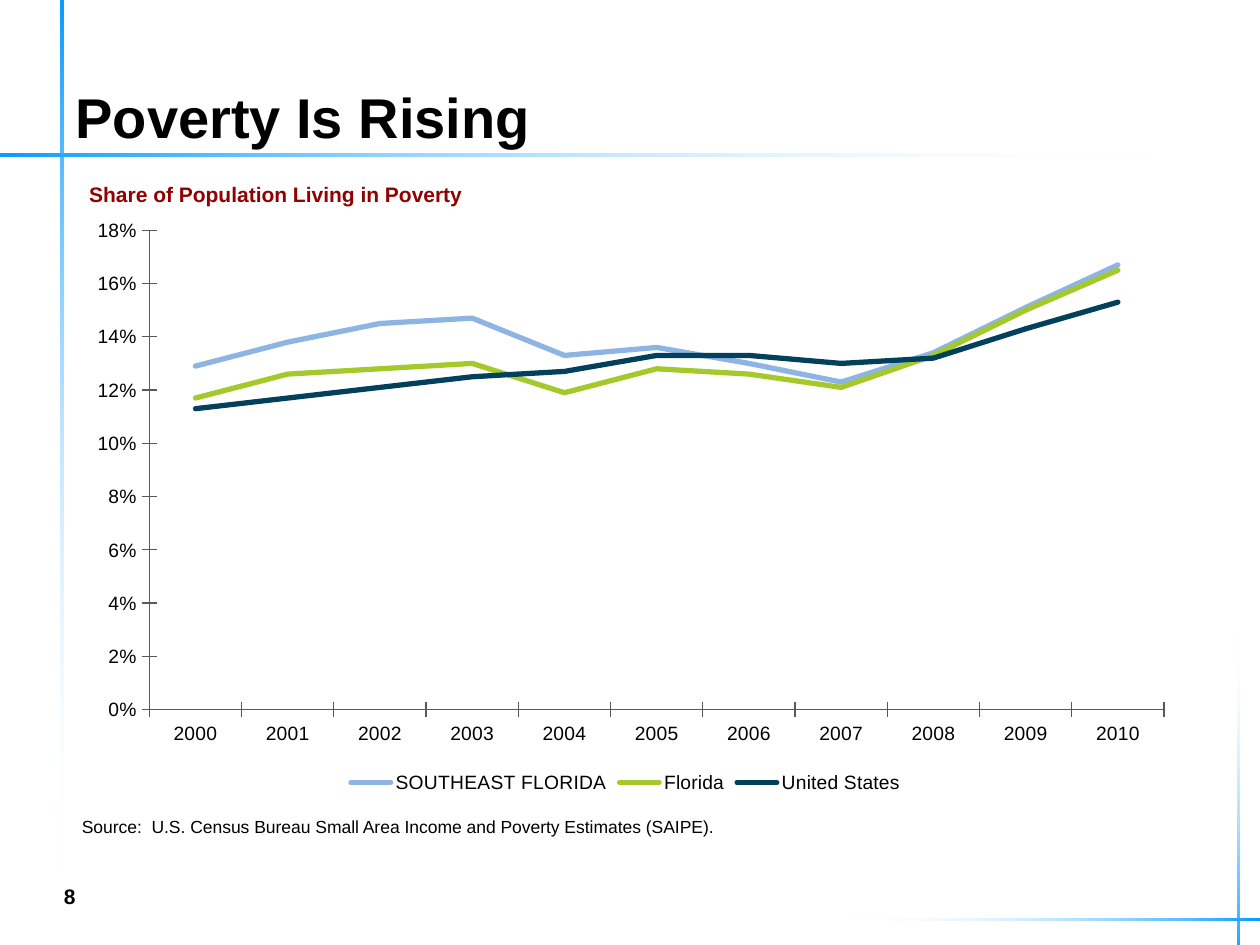
from dataclasses import dataclass

from lxml.etree import SubElement
from pptx import Presentation
from pptx.chart.data import CategoryChartData
from pptx.dml.color import RGBColor
from pptx.enum.chart import XL_CHART_TYPE as ChartType
from pptx.enum.chart import XL_LEGEND_POSITION as LegendPos
from pptx.enum.chart import XL_TICK_MARK as Tick
from pptx.enum.shapes import MSO_SHAPE as Shape
from pptx.enum.text import MSO_ANCHOR as Anchor
from pptx.enum.text import PP_ALIGN as Align
from pptx.oxml import parse_xml
from pptx.oxml.ns import nsdecls, qn
from pptx.util import Cm, Pt

FONT = "Arial"
BLACK, WHITE, BLUE, RED, GREY = "000000", "FFFFFF", "0099FF", "920000", "595959"
RIGHT, UP, LEFT, DOWN = 0, 90, 180, 270  # gradient directions in degrees


@dataclass
class Box:
    left: float
    top: float
    width: float
    height: float

    def emu(self) -> tuple:
        return Cm(self.left), Cm(self.top), Cm(self.width), Cm(self.height)


@dataclass
class Rule:
    box: Box
    direction: int


@dataclass
class Label:
    text: str
    box: Box
    size: float
    color: str = BLACK
    bold: bool = False
    anchor: Anchor = Anchor.TOP


@dataclass
class Series:
    name: str
    color: str
    percents: tuple


RULES = [
    Rule(Box(-0.43, 3.09, 23.88, 0.07), RIGHT),
    Rule(Box(1.23, -0.23, 0.06, 17.96), DOWN),
    Rule(Box(17.04, 18.51, 8.51, 0.04), LEFT),
    Rule(Box(24.94, 12.8, 0.04, 6.71), UP),
]
TITLE = Label("Poverty Is Rising", Box(1.27, -0.03, 22.86, 3.18), 32,
              bold=True, anchor=Anchor.BOTTOM)
LABELS = [
    Label("8", Box(1.04, 17.55, 1.85, 1.02), 12, bold=True, anchor=Anchor.MIDDLE),
    Label("Source:  U.S. Census Bureau Small Area Income and Poverty Estimates (SAIPE).",
          Box(1.4, 16.33, 14.6, 0.69), 10),
    Label("Share of Population Living in Poverty", Box(1.55, 3.53, 10.36, 0.76), 12,
          RED, bold=True),
]
CHART_BOX = Box(1.37, 4.24, 22.48, 11.86)
PLOT = {"x": 0.073, "y": 0.034, "w": 0.91, "h": 0.815}
YEARS = [str(year) for year in range(2000, 2011)]
SERIES = [
    Series("SOUTHEAST FLORIDA", "8EB4E3",
           (12.9, 13.8, 14.5, 14.7, 13.3, 13.6, 13, 12.3, 13.4, 15.1, 16.7)),
    Series("Florida", "A5C92B",
           (11.7, 12.6, 12.8, 13, 11.9, 12.8, 12.6, 12.1, 13.3, 15, 16.5)),
    Series("United States", "02405C",
           (11.3, 11.7, 12.1, 12.5, 12.7, 13.3, 13.3, 13, 13.2, 14.3, 15.3)),
]


def rgb(color: str) -> RGBColor:
    return RGBColor.from_string(color)


def style_font(font, size: float, color: str, bold: bool = False) -> None:
    font.name, font.size, font.bold = FONT, Pt(size), bold
    font.color.rgb = rgb(color)


def add_rule(slide, rule: Rule) -> None:
    """Draw a thin bar that fades from blue to transparent."""
    sp = slide.shapes.add_shape(Shape.RECTANGLE, *rule.box.emu())
    sp.shadow.inherit = False
    sp.line.fill.background()
    sp.fill.gradient()
    sp.fill.gradient_angle = rule.direction
    for stop, color, position in zip(sp.fill.gradient_stops, (BLUE, WHITE), (0, 1)):
        stop.color.rgb = rgb(color)
        stop.position = position
    end_color = list(sp._element.spPr.iter(qn("a:srgbClr")))[-1]
    SubElement(end_color, qn("a:alpha")).set("val", "0")


def write_label(sp, label: Label) -> None:
    tf = sp.text_frame
    tf.text = label.text
    tf.word_wrap = True
    tf.vertical_anchor = label.anchor
    p = tf.paragraphs[0]
    p.alignment = Align.LEFT
    style_font(p.runs[0].font, label.size, label.color, label.bold)


def add_title(slide) -> None:
    title = slide.shapes.title
    title.left, title.top, title.width, title.height = TITLE.box.emu()
    write_label(title, TITLE)


def place_plot(chart) -> None:
    """Fix the inner plot area as fractions of the chart."""
    area = chart._chartSpace.chart.plotArea
    for old in area.findall(qn("c:layout")):
        area.remove(old)
    modes = '<c:xMode val="edge"/><c:yMode val="edge"/>'
    sides = "".join(f'<c:{key} val="{value}"/>' for key, value in PLOT.items())
    area.insert(0, parse_xml(
        f'<c:layout {nsdecls("c")}><c:manualLayout><c:layoutTarget val="inner"/>'
        f"{modes}{sides}</c:manualLayout></c:layout>"))


def add_poverty_chart(slide) -> None:
    data = CategoryChartData(number_format="0%")
    data.categories = YEARS
    for series in SERIES:
        data.add_series(series.name, [round(v / 100, 3) for v in series.percents])
    chart = slide.shapes.add_chart(ChartType.LINE, *CHART_BOX.emu(), data).chart
    style_font(chart.font, 11, BLACK)
    chart.has_title = False
    chart.has_legend = True
    chart.legend.position = LegendPos.BOTTOM
    chart.legend.include_in_layout = False
    place_plot(chart)

    for axis in (chart.category_axis, chart.value_axis):
        axis.has_major_gridlines = False
        axis.major_tick_mark = Tick.CROSS
        axis.minor_tick_mark = Tick.NONE
        axis.format.line.color.rgb = rgb(GREY)
        axis.format.line.width = Pt(0.75)
    values = chart.value_axis
    values.minimum_scale, values.maximum_scale, values.major_unit = 0, 0.18, 0.02
    values.tick_labels.number_format = "0%"
    values.tick_labels.number_format_is_linked = False

    chart.plots[0].vary_by_categories = False
    for drawn, series in zip(chart.plots[0].series, SERIES):
        drawn.smooth = False
        line = drawn.format.line
        line.color.rgb = rgb(series.color)
        line.width = Pt(3)
        drawn._element.spPr.find(qn("a:ln")).set("cap", "rnd")


def main() -> None:
    prs = Presentation()
    prs.slide_width, prs.slide_height = Cm(25.4), Cm(19.05)
    slide = prs.slides.add_slide(prs.slide_layouts[5])
    for rule in RULES:
        add_rule(slide, rule)
    add_title(slide)
    add_poverty_chart(slide)
    for label in LABELS:
        write_label(slide.shapes.add_textbox(*label.box.emu()), label)
    prs.save("out.pptx")


if __name__ == "__main__":
    main()
